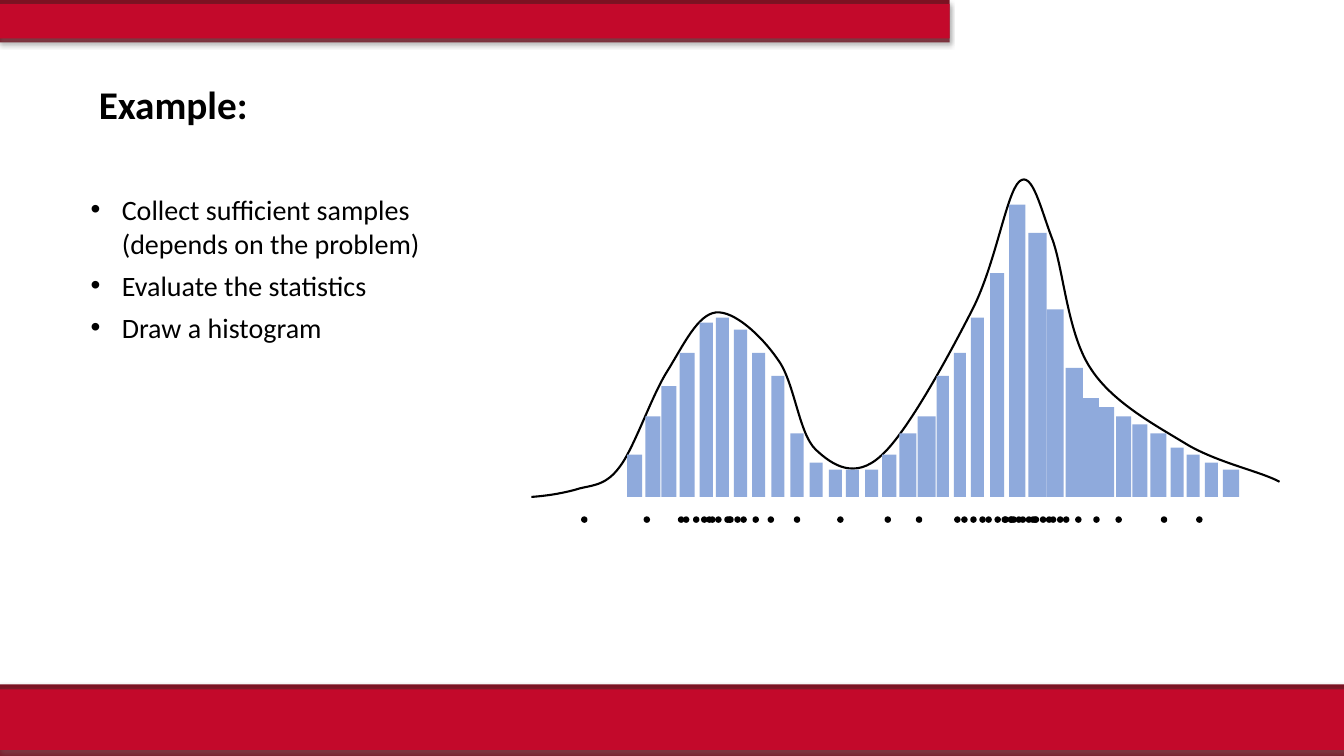
from lxml import etree
from pptx import Presentation
from pptx.dml.color import RGBColor
from pptx.enum.shapes import MSO_SHAPE as Shape
from pptx.enum.text import MSO_ANCHOR as Anchor, MSO_AUTO_SIZE as AutoSize, PP_ALIGN as Align
from pptx.oxml.ns import qn
from pptx.util import Inches, Pt

COLORS = {"black": "000000", "band": "C3092B", "edge": "7B1222",
          "bar": "8FAADC", "shadow": "808080"}
COLUMNS, ROWS = 1333, 750  # square grid cells of 0.01 inch
CELL = Inches(0.01)

# left, top, width, height, color
BANDS = [(0, 679, 1333, 71, "edge"), (0, 684, 1333, 60, "band"),
         (0, 0, 942, 42, "edge"), (0, 4, 942, 34, "band")]
BASELINE = 493
# left, width, top
BARS = [
    (622, 15, 451), (640, 15, 413), (656, 15, 383), (674, 15, 350), (694, 13, 320),
    (710, 13, 315), (728, 13, 327), (746, 13, 350), (765, 13, 373), (784, 13, 430),
    (803, 13, 459), (822, 13, 466), (839, 13, 466), (858, 13, 466), (875, 14, 451),
    (892, 17, 430), (910, 18, 413), (929, 12, 373), (946, 12, 350), (963, 13, 315),
    (982, 14, 271), (1001, 16, 203), (1020, 18, 231), (1038, 17, 307), (1057, 17, 365),
    (1074, 16, 395), (1089, 16, 404), (1107, 15, 413), (1123, 15, 421), (1141, 16, 430),
    (1161, 13, 444), (1177, 13, 451), (1195, 13, 459), (1213, 16, 466)]
SAMPLE_TOP, SAMPLE_SIZE = 513, 5
SAMPLES = [
    577, 639, 673, 678, 688, 696, 701, 704, 710, 719, 721, 722, 729, 735, 747, 762, 788,
    831, 878, 909, 947, 954, 963, 972, 978, 987, 994, 995, 1000, 1001, 1003, 1008, 1012,
    1018, 1022, 1024, 1025, 1032, 1038, 1042, 1049, 1055, 1067, 1085, 1107, 1152, 1187]
# start point, then three Bezier points for each segment
DENSITY = [
    (527, 493), (541, 492), (555, 490), (570, 486), (584, 481), (599, 484), (614, 464),
    (629, 445), (646, 393), (662, 368), (678, 342), (692, 312), (710, 310),
    (728, 308), (755, 333), (771, 356), (788, 378), (792, 430), (809, 446),
    (826, 462), (848, 476), (874, 452), (900, 429), (942, 351), (965, 306),
    (988, 260), (998, 192), (1011, 180), (1024, 169), (1032, 207), (1044, 238),
    (1055, 269), (1059, 332), (1082, 366), (1104, 400), (1148, 423), (1179, 442),
    (1211, 460), (1251, 468), (1269, 478)]
STEPS = ["Collect sufficient samples (depends on the problem)",
         "Evaluate the statistics", "Draw a histogram"]


def apply(target, values):
    for name, value in values.items():
        setattr(target, name, value)


class SlideBuilder:
    def __init__(self, presentation):
        self.slide = presentation.slides.add_slide(presentation.slide_layouts[5])
        self.font = {"name": "Calibri", "size": Pt(20), "bold": False}

    def color(self, name):
        return RGBColor.from_string(COLORS[name])

    def format_paragraph(self, paragraph, font=None, **values):
        apply(paragraph, {"alignment": Align.LEFT, "space_before": Pt(0),
                          "space_after": Pt(6), **values})
        apply(paragraph.font, {**self.font, **(font or {})})
        paragraph.font.color.rgb = self.color("black")

    def title(self, text, left, top, width, height):
        title = self.slide.shapes.title
        apply(title, {"left": left * CELL, "top": top * CELL,
                      "width": width * CELL, "height": height * CELL})
        apply(title.text_frame, {"text": text, "vertical_anchor": Anchor.TOP,
                                 "auto_size": AutoSize.NONE, "word_wrap": True})
        self.format_paragraph(title.text_frame.paragraphs[0],
                              {"size": Pt(28), "bold": True}, line_spacing=0.9)

    def bullets(self, items, left, top, width, height):
        box = self.slide.shapes.add_textbox(left * CELL, top * CELL, width * CELL, height * CELL)
        frame = box.text_frame
        apply(frame, {"text": "\n".join(items), "word_wrap": True,
                      "auto_size": AutoSize.SHAPE_TO_FIT_TEXT})
        for paragraph in frame.paragraphs:
            properties = paragraph._p.get_or_add_pPr()
            properties.set("marL", str(Inches(0.31)))
            properties.set("indent", str(-Inches(0.31)))
            etree.SubElement(properties, qn("a:buFont"), typeface="Arial")
            etree.SubElement(properties, qn("a:buChar"), char="•")
            self.format_paragraph(paragraph)

    def block(self, left, top, width, height, color, kind=Shape.RECTANGLE, outline=None):
        shape = self.slide.shapes.add_shape(
            kind, left * CELL, top * CELL, width * CELL, height * CELL)
        shape.shadow.inherit = False
        shape.fill.solid()
        shape.fill.fore_color.rgb = self.color(color)
        if outline:
            shape.line.color.rgb = self.color(color)
            shape.line.width = Pt(outline)
        else:
            shape.line.fill.background()
        return shape

    def band(self, *place_and_color):
        """Draw a block with a soft shadow below it."""
        shape = self.block(*place_and_color)
        effects = shape._element.spPr.find(qn("a:effectLst"))
        shadow = etree.SubElement(
            effects, qn("a:outerShdw"), blurRad=str(Pt(3.1)), dist=str(Pt(1.8)),
            dir="5400000", rotWithShape="0")
        color = etree.SubElement(shadow, qn("a:srgbClr"), val=COLORS["shadow"])
        etree.SubElement(color, qn("a:alpha"), val="35000")

    def curve(self, points, color, width):
        """Draw an open path of cubic Bezier segments."""
        builder = self.slide.shapes.build_freeform(*points[0], scale=CELL)
        builder.add_line_segments(points[1:], close=False)
        shape = builder.convert_to_shape()
        shape.shadow.inherit = False
        shape.fill.background()
        shape.line.color.rgb = self.color(color)
        shape.line.width = Pt(width)
        outline = shape._element.find(".//" + qn("a:path"))
        corners = outline.findall(qn("a:lnTo"))
        for start in range(0, len(corners), 3):
            segment = etree.SubElement(outline, qn("a:cubicBezTo"))
            for corner in corners[start:start + 3]:
                segment.append(corner[0])
                outline.remove(corner)


def main():
    presentation = Presentation()
    presentation.slide_width = COLUMNS * CELL
    presentation.slide_height = ROWS * CELL
    builder = SlideBuilder(presentation)
    for band in BANDS:
        builder.band(*band)
    builder.curve(DENSITY, "black", 1.5)
    for left, width, top in BARS:
        builder.block(left, top, width, BASELINE - top, "bar")
    for left in SAMPLES:
        builder.block(left, SAMPLE_TOP, SAMPLE_SIZE, SAMPLE_SIZE, "black", Shape.OVAL, 1)
    builder.bullets(STEPS, 80, 186, 394, 162)
    builder.title("Example:", 88, 80, 430, 86)
    presentation.save("out.pptx")


if __name__ == "__main__":
    main()
